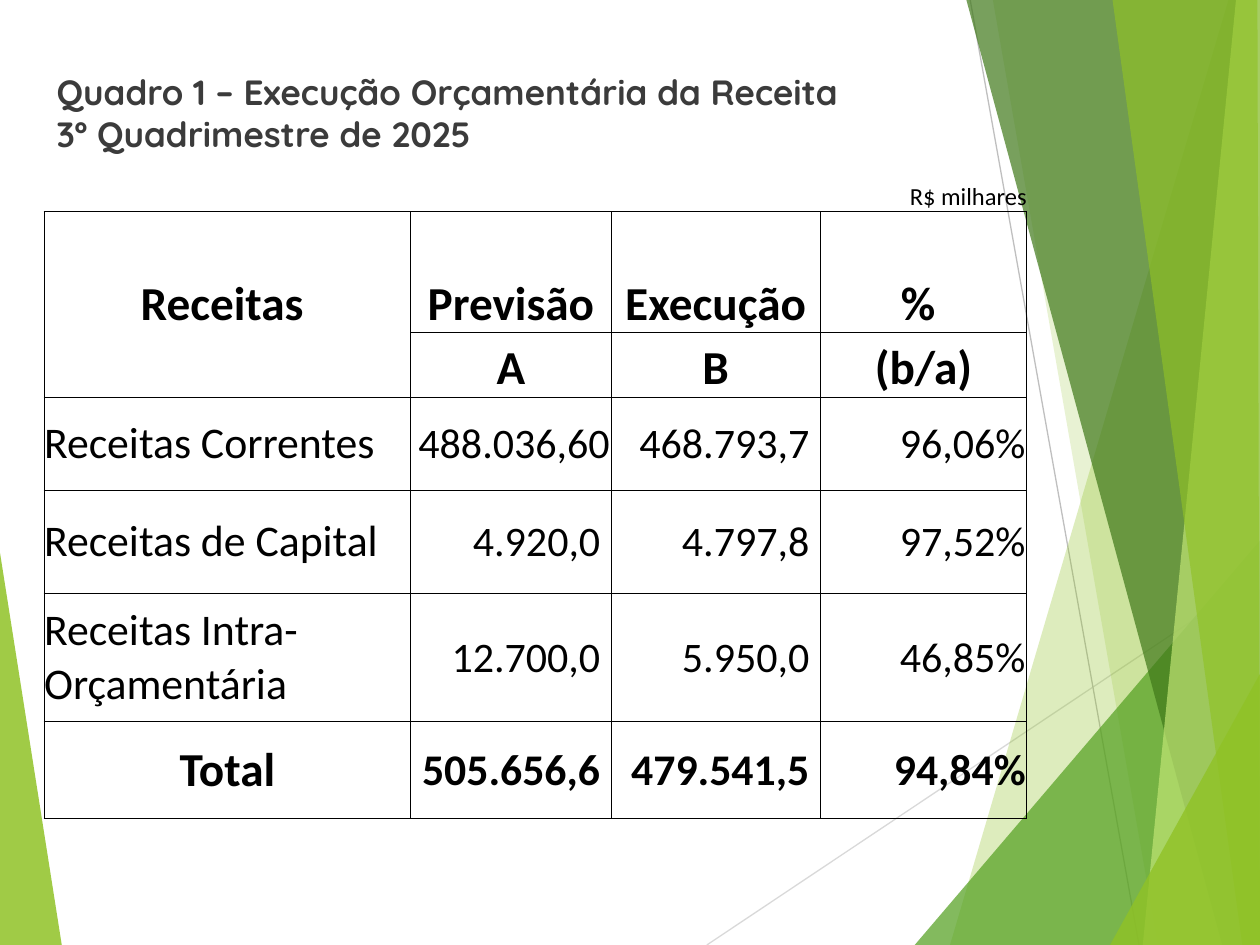
from itertools import product
from lxml.etree import SubElement
from pptx import Presentation
from pptx.dml.color import RGBColor
from pptx.enum.shapes import MSO_CONNECTOR as Link
from pptx.enum.text import MSO_ANCHOR as Anchor, MSO_AUTO_SIZE as Fit, PP_ALIGN as Align
from pptx.oxml.ns import qn
from pptx.util import Inches, Pt

WIDE, HIGH = Inches(10), Inches(7.5)
PAGE = (0, 0, WIDE, HIGH)
PLAIN = "{2D5ABB26-0587-4C30-8999-92F81FD0307C}"
LINES = [
    ((56.1, 100), (100, 60.9), "D9D9D9"),
    ((77, 0), (90.4, 100), "BFBFBF"),
]
LEAF = ([(0, 58.5), (4.9, 100), (0, 100)], "90C226", 85)
BLADES = [
    ([(97.5, 0), (75.4, 100), (100, 100), (100, 0)], "90C226", 30),
    ([(78.8, 0), (91.9, 100), (100, 100), (100, 0)], "90C226", 20),
    ([(72.6, 100), (100, 57.2), (100, 100)], "54A021", 72),
    ([(76.7, 0), (97, 100), (100, 100), (100, 0)], "3F7819", 70),
    ([(98.1, 0), (90.7, 100), (100, 100), (100, 0)], "C0E474", 70),
    ([(88.3, 0), (98.6, 100), (100, 100), (99.8, 0)], "90C226", 65),
    ([(88.1, 100), (100, 71.3), (100, 100)], "90C226", 80),
]
COLS = [291, 159, 166, 164]
ROWS = [58, 96, 51, 74, 82, 102, 77]
CELLS = [
    ["", "", "", "R$ milhares"],
    ["Receitas ", "Previsão", "Execução", "% "],
    ["", "A", "B", "(b/a)"],
    ["Receitas Correntes", "488.036,60", "468.793,7 ", "96,06%"],
    ["Receitas de Capital", "4.920,0 ", "4.797,8 ", "97,52%"],
    ["Receitas Intra-Orçamentária", "12.700,0 ", "5.950,0 ", "46,85%"],
    ["Total", "505.656,6 ", "479.541,5 ", "94,84%"],
]
UNIT = dict(size=Pt(14), bold=False, align=Align.RIGHT, anchor=Anchor.BOTTOM)
HEAD = dict(size=Pt(27), bold=True, align=Align.CENTER, anchor=Anchor.BOTTOM)
MID = dict(HEAD, anchor=Anchor.MIDDLE)
NAME = dict(size=Pt(25), bold=False, align=Align.LEFT, anchor=Anchor.MIDDLE)
VALUE = dict(NAME, size=Pt(24), align=Align.RIGHT)
SUM = dict(VALUE, size=Pt(25), bold=True)


def color(code):
    """Turn a hex string into a colour."""
    return RGBColor.from_string(code)


def spot(box, point):
    """Turn percent shares of a box into a place on the slide."""
    left, top, wide, high = box
    return round(left + wide * point[0] / 100), round(top + high * point[1] / 100)


def part(box, left, top, wide, high):
    """Cut a smaller box out of a box by percent shares."""
    return *spot(box, (left, top)), *spot((0, 0, *box[2:]), (wide, high))


def style(target, **values):
    """Set attributes from format values."""
    for key, value in values.items():
        setattr(target, key, value)


def draw_blade(slide, box, points, code, alpha):
    """Draw one translucent polygon."""
    start, *rest = [spot(box, point) for point in points]
    pen = slide.shapes.build_freeform(*start)
    pen.add_line_segments(rest, close=True)
    blade = pen.convert_to_shape()
    blade.shadow.inherit = False
    blade.line.fill.background()
    blade.fill.solid()
    blade.fill.fore_color.rgb = color(code)
    tint = next(blade.fill._xPr.iter(qn("a:srgbClr")))
    SubElement(tint, qn("a:alpha"), val=str(alpha * 1000))


def draw_line(slide, box, start, end, code):
    """Draw one thin straight line."""
    line = slide.shapes.add_connector(Link.STRAIGHT, *spot(box, start), *spot(box, end))
    line.line.width = Pt(0.75)
    line.line.color.rgb = color(code)
    SubElement(line._element.spPr, qn("a:effectLst"))


def draw_decor(slide, box):
    """Draw the leaf, the lines and the blades behind the content."""
    draw_blade(slide, box, *LEAF)
    for line in LINES:
        draw_line(slide, box, *line)
    for blade in BLADES:
        draw_blade(slide, box, *blade)


def put_title(slide, box):
    """Move and format the title."""
    title = slide.shapes.title
    style(title, **dict(zip(("left", "top", "width", "height"), box)))
    frame = title.text_frame
    frame.text = "Quadro 1 – Execução Orçamentária da Receita\v3º Quadrimestre de 2025"
    style(frame, word_wrap=True, auto_size=Fit.NONE, vertical_anchor=Anchor.TOP)
    text = frame.paragraphs[0]
    text.alignment = Align.LEFT
    style(text.font, name="Quicksand", size=Pt(20), bold=True)
    text.font.color.rgb = color("3B3B3B")


def add_edges(cell, sides):
    """Give a cell thin black borders on the named sides."""
    props = cell._tc.get_or_add_tcPr()
    for side in "LRTB":
        edge = SubElement(props, qn(f"a:ln{side}"), w=str(Pt(0.5)))
        if side in sides:
            fill = SubElement(edge, qn("a:solidFill"))
            SubElement(fill, qn("a:srgbClr"), val="000000")
        else:
            SubElement(edge, qn("a:noFill"))


def pick(row, col):
    """Choose the format of a cell by its place."""
    if row == 0:
        return UNIT
    if row < 3:
        return HEAD if col else MID
    if row == len(ROWS) - 1:
        return SUM if col else MID
    return VALUE if col else NAME


def fill_cell(cell, text, size, bold, align, anchor, pad):
    """Write and format one cell."""
    style(cell, text=text, vertical_anchor=anchor, margin_left=pad,
          margin_right=pad, margin_top=pad, margin_bottom=0)
    line = cell.text_frame.paragraphs[0]
    line.alignment = align
    style(line.font, name="Calibri", size=size, bold=bold)
    line.font.color.rgb = color("000000")


def put_table(slide, box):
    """Place the revenue table in a box."""
    frame = slide.shapes.add_table(len(ROWS), len(COLS), *box)
    table = frame.table
    style(table, first_row=False, horz_banding=False)
    table._tbl.tblPr.find(qn("a:tableStyleId")).text = PLAIN
    for col, share in zip(table.columns, COLS):
        col.width = round(box[2] * share / sum(COLS))
    for row, share in zip(table.rows, ROWS):
        row.height = round(box[3] * share / sum(ROWS))
    for row, col in product(range(len(ROWS)), range(len(COLS))):
        cell = table.cell(row, col)
        pad = Inches(0.01) if row > 2 and col else 0
        fill_cell(cell, CELLS[row][col], **pick(row, col), pad=pad)
        add_edges(cell, "LRTB" if row else "B")
        cell.fill.background()
    table.cell(1, 0).merge(table.cell(2, 0))


def main():
    """Build the slide and save it."""
    deck = Presentation()
    style(deck, slide_width=WIDE, slide_height=HIGH)
    slide = deck.slides.add_slide(deck.slide_layouts[5])
    draw_decor(slide, PAGE)
    put_title(slide, part(PAGE, 3.5, 6.8, 85, 7.7))
    put_table(slide, part(PAGE, 3.5, 14.67, 78, 72))
    deck.save("out.pptx")


if __name__ == "__main__":
    main()
